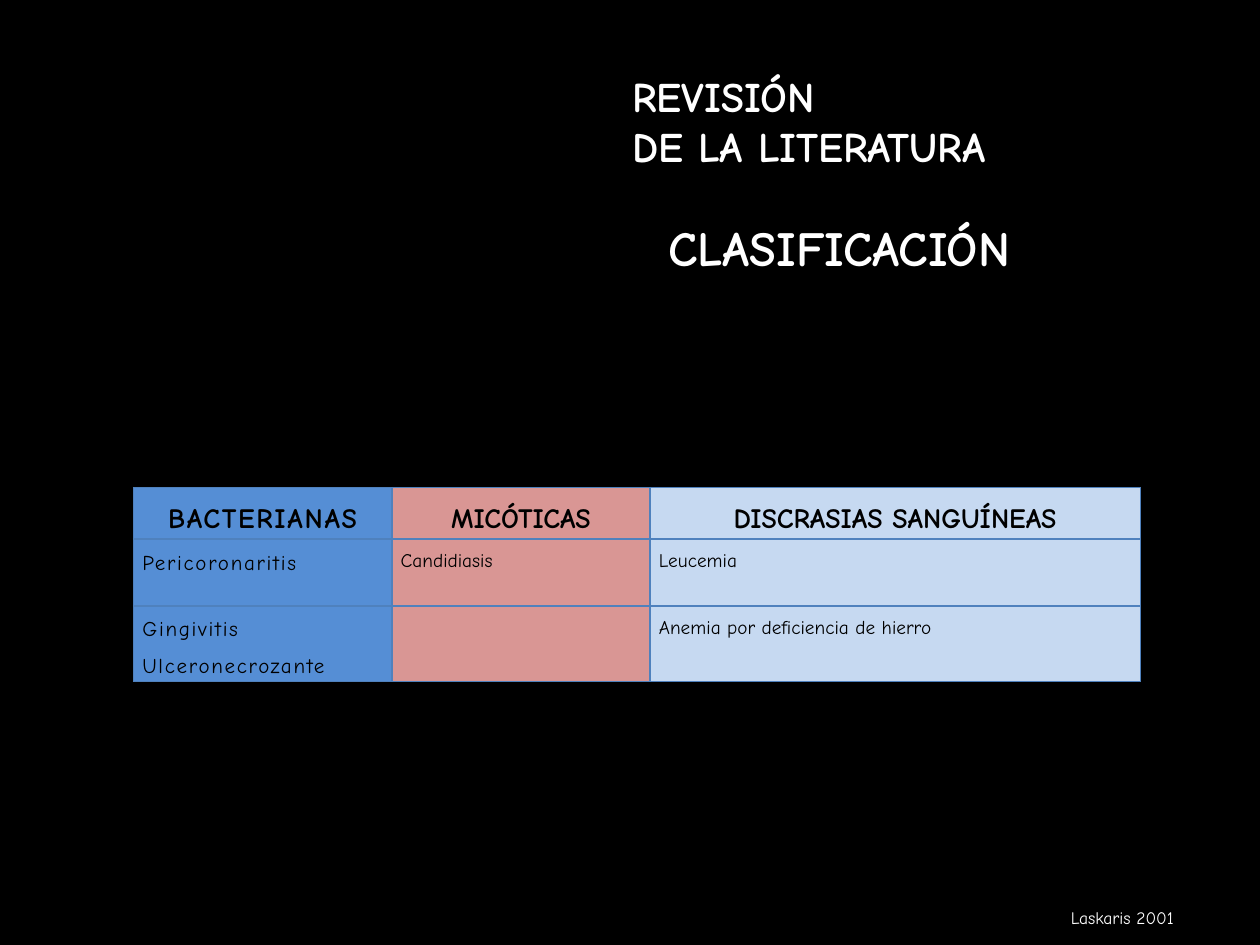
from lxml import etree
from pptx import Presentation, util as u
from pptx.dml.color import RGBColor
from pptx.enum import text
from pptx.oxml.ns import qn

COLOURS = {"black": "000000", "white": "FFFFFF", "border": "4F81BD",
           "bacterial": "558ED5", "fungal": "D99694", "blood": "C6D9F1"}
FONT = "Comic Neue"
WIDTH, HEIGHT = u.Inches(10), u.Inches(7.5)
COLUMNS = [("bacterial", 2.05, 12, 1), ("fungal", 2.05, 11, 0), ("blood", 3.89, 11, 0)]
ROW_HEIGHTS = [0.41, 0.53, 0.6]
ROWS = [["BACTERIANAS", "MICÓTICAS", "DISCRASIAS SANGUÍNEAS"],
        ["Pericoronaritis", "Candidiasis", "Leucemia"],
        ["Gingivitis Ulceronecrozante", "", "Anemia por deficiencia de hierro"]]


def area(left, top, width, height):
    """Turn shares of the slide into a box of lengths."""
    return [round(share * side) for share, side in
            zip((left, top, width, height), (WIDTH, HEIGHT) * 2)]


def style(para, size, colour, bold=False):
    """Set the font of a whole paragraph."""
    para.font.name = FONT
    para.font.size = u.Pt(size)
    para.font.bold = bold
    para.font.color.rgb = RGBColor.from_string(COLOURS[colour])


def add_label(page, box, lines, size, bold=False, align=text.PP_ALIGN.LEFT,
              anchor=text.MSO_ANCHOR.TOP):
    """Place white text, one paragraph per line."""
    frame = page.shapes.add_textbox(*box).text_frame
    frame.word_wrap = True
    frame.vertical_anchor = anchor
    frame.text = "\n".join(lines)
    for para in frame.paragraphs:
        para.alignment = align
        style(para, size, "white", bold)


def add_borders(cell):
    """Draw the four sides of a cell."""
    properties = cell._tc.get_or_add_tcPr()
    for index, side in enumerate(("lnL", "lnR", "lnT", "lnB")):
        line = etree.Element(qn(f"a:{side}"), w=str(u.Pt(1)))
        fill = etree.SubElement(line, qn("a:solidFill"))
        etree.SubElement(fill, qn("a:srgbClr"), val=COLOURS["border"])
        properties.insert(index, line)


def fill_cell(cell, words, column, header):
    """Colour one cell and write its words."""
    colour, _, size, spacing = column
    cell.fill.solid()
    cell.fill.fore_color.rgb = RGBColor.from_string(COLOURS[colour])
    add_borders(cell)
    cell.margin_left = cell.margin_right = u.Inches(0.07)
    cell.margin_top = cell.margin_bottom = 0
    cell.text = words
    para = cell.text_frame.paragraphs[0]
    para.line_spacing = 1.5
    wraps = " " in words and spacing
    para.alignment = (text.PP_ALIGN.CENTER if header else
                      text.PP_ALIGN.LEFT if wraps else text.PP_ALIGN.JUSTIFY)
    style(para, 16 if header else size, "black", header)
    for span in para.runs:
        span._r.get_or_add_rPr().set("spc", str(spacing * 100))


def add_classification(page, box):
    """Place the table of causes, scaled to its box."""
    left, top, width, height = box
    table = page.shapes.add_table(len(ROWS), len(COLUMNS), left, top, width, height).table
    table.first_row = table.horz_banding = False
    total = sum(column[1] for column in COLUMNS)
    for target, column in zip(table.columns, COLUMNS):
        target.width = round(width * column[1] / total)
    for target, share in zip(table.rows, ROW_HEIGHTS):
        target.height = round(height * share / sum(ROW_HEIGHTS))
    for row, entries in enumerate(ROWS):
        for index, words in enumerate(entries):
            fill_cell(table.cell(row, index), words, COLUMNS[index], row == 0)


def main():
    """Build the slide and save it."""
    deck = Presentation()
    deck.slide_width, deck.slide_height = WIDTH, HEIGHT
    page = deck.slides.add_slide(deck.slide_layouts[6])
    page.background.fill.solid()
    page.background.fill.fore_color.rgb = RGBColor.from_string(COLOURS["black"])
    add_label(page, area(0.84, 0.953, 0.137, 0.036), ["Laskaris 2001"], 10)
    add_classification(page, area(0.106, 0.516, 0.799, 0.205))
    add_label(page, area(0.492, 0.044, 0.469, 0.167), ["REVISIÓN", "DE LA LITERATURA"],
              24, True, anchor=text.MSO_ANCHOR.MIDDLE)
    add_label(page, area(0.487, 0.224, 0.358, 0.076), ["CLASIFICACIÓN"], 28, True,
              text.PP_ALIGN.CENTER)
    deck.save("out.pptx")


if __name__ == "__main__":
    main()
